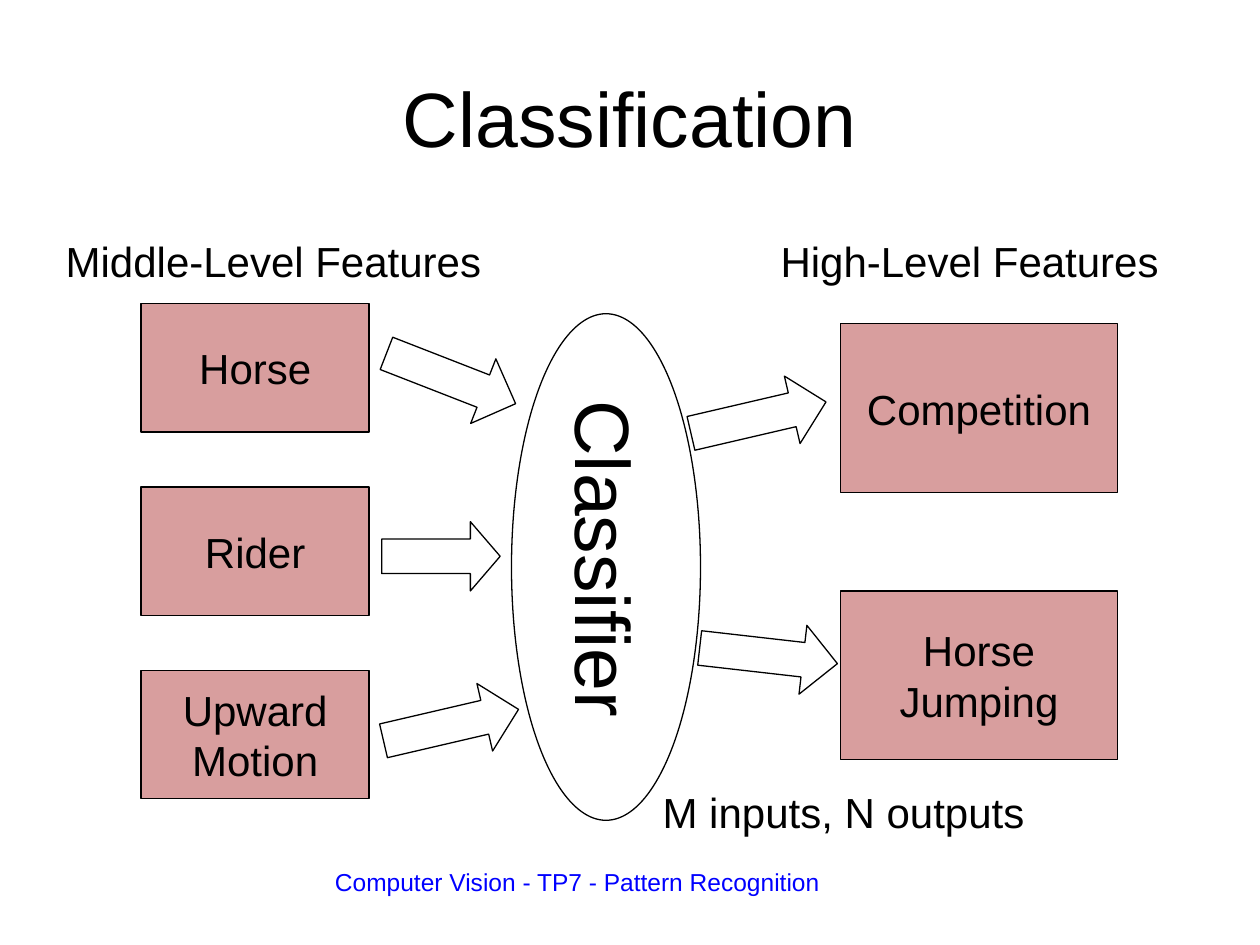
import pptx
import pptx.dml.color
import pptx.enum.shapes
import pptx.enum.text
import pptx.util
from lxml import etree
from pptx.oxml.ns import qn
from pptx.util import Inches

BLACK = pptx.dml.color.RGBColor(0x00, 0x00, 0x00)
BLUE = pptx.dml.color.RGBColor(0x00, 0x00, 0xFF)
DARK_RED = pptx.dml.color.RGBColor(0x99, 0x00, 0x00)
FILL_OPACITY = 38
FONT = "Arial"
SHAPES = pptx.enum.shapes.MSO_SHAPE
CENTER = pptx.enum.text.PP_ALIGN.CENTER
LEFT = pptx.enum.text.PP_ALIGN.LEFT
MIDDLE = pptx.enum.text.MSO_ANCHOR.MIDDLE

TITLE = "Classification"
# Columns of feature boxes: left, first top, width, height, vertical step, labels
FEATURE_COLUMNS = [
    (1.12, 2.41, 1.81, 1.02, 1.455, ["Horse", "Rider", "Upward\nMotion"]),
    (6.67, 2.57, 2.2, 1.34, 2.12, ["Competition", "Horse\nJumping"]),
]
CLASSIFIER = ("Classifier", (4.06, 2.49, 1.5, 4.02))
# Arrows: left, top, width, rotation in degrees, head length
ARROW_HEIGHT = 0.55
ARROWS = [
    (3.03, 2.73, 1.1, 21.3, 0.5),
    (3.03, 4.14, 0.94, 0, 0.43),
    (3.03, 5.48, 1.1, 346.9, 0.5),
    (5.47, 3.04, 1.1, 346.9, 0.5),
    (5.55, 4.93, 1.1, 6.5, 0.5),
]
CAPTIONS = [
    ("Middle-Level Features", (0.42, 1.82, 3.5, 0.5)),
    ("High-Level Features", (6.09, 1.82, 3.21, 0.5)),
    ("M inputs, N outputs", (5.16, 6.19, 3.07, 0.5)),
]
FOOTER = ("Computer Vision - TP7 - Pattern Recognition", (2.56, 6.83, 6.14, 0.52))


def write(shape, text, size, color=BLACK, alignment=CENTER, wrap=False):
    frame = shape.text_frame
    frame.text = text
    frame.word_wrap = wrap
    for paragraph in frame.paragraphs:
        paragraph.alignment = alignment
        for run in paragraph.runs:
            run.font.name = FONT
            run.font.size = pptx.util.Pt(size)
            run.font.color.rgb = color


def add_outlined(slide, kind, box):
    """Add an unfilled preset shape with a thin black outline."""
    shape = slide.shapes.add_shape(kind, *map(Inches, box))
    shape.shadow.inherit = False
    shape.fill.background()
    shape.line.color.rgb = BLACK
    shape.line.width = pptx.util.Pt(0.75)
    return shape


def add_feature(slide, label, box):
    shape = add_outlined(slide, SHAPES.RECTANGLE, box)
    shape.fill.solid()
    shape.fill.fore_color.rgb = DARK_RED
    color = shape.element.spPr.find(qn("a:solidFill")).find(qn("a:srgbClr"))
    etree.SubElement(color, qn("a:alpha"), val=str(FILL_OPACITY * 1000))
    write(shape, label, 24)
    shape.text_frame.vertical_anchor = MIDDLE


def add_classifier(slide):
    label, box = CLASSIFIER
    ellipse = add_outlined(slide, SHAPES.OVAL, box)
    write(ellipse, label, 44)
    ellipse.text_frame.vertical_anchor = MIDDLE
    ellipse.element.txBody.find(qn("a:bodyPr")).set("vert", "eaVert")


def add_arrow(slide, left, top, width, rotation, head):
    arrow = add_outlined(slide, SHAPES.RIGHT_ARROW, (left, top, width, ARROW_HEIGHT))
    arrow.rotation = rotation
    arrow.adjustments[1] = head


def add_text(slide, text, box, size, **style):
    write(slide.shapes.add_textbox(*map(Inches, box)), text, size, **style)


def main():
    presentation = pptx.Presentation()
    presentation.slide_width = Inches(10)
    presentation.slide_height = Inches(7.5)
    slide = presentation.slides.add_slide(presentation.slide_layouts[5])

    title = slide.shapes.title
    title.left, title.top = Inches(0.5), Inches(0.3)
    title.width, title.height = Inches(9), Inches(1.25)
    write(title, TITLE, 44, wrap=True)
    title.text_frame.vertical_anchor = MIDDLE

    for left, top, width, height, step, labels in FEATURE_COLUMNS:
        for row, label in enumerate(labels):
            add_feature(slide, label, (left, top + row * step, width, height))
    add_classifier(slide)
    for arrow in ARROWS:
        add_arrow(slide, *arrow)
    for text, box in CAPTIONS:
        add_text(slide, text, box, 24)
    add_text(slide, *FOOTER, 14, color=BLUE, alignment=LEFT, wrap=True)

    presentation.save("out.pptx")


if __name__ == "__main__":
    main()
